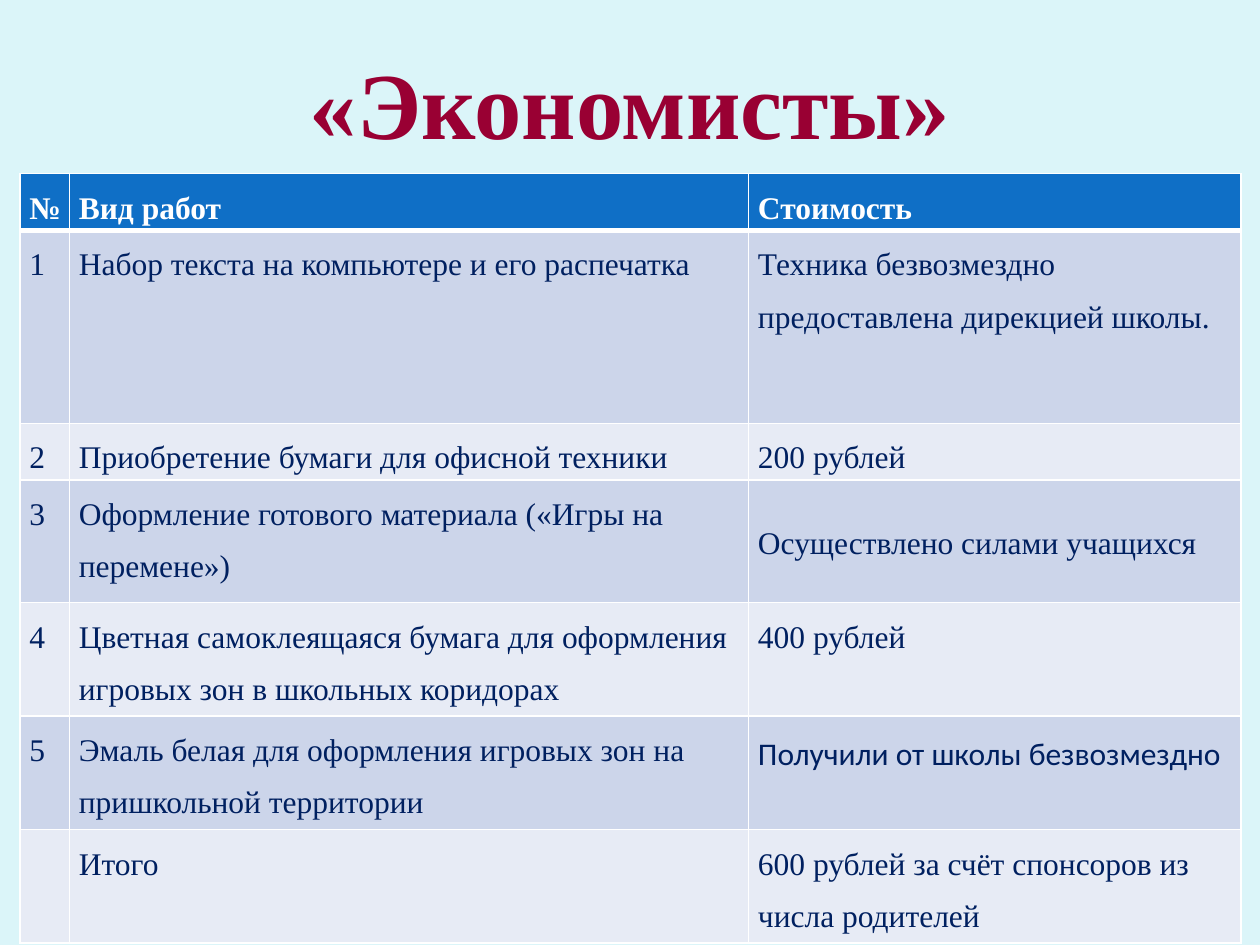
from dataclasses import dataclass

from lxml.etree import SubElement
from pptx import Presentation
from pptx.dml.color import RGBColor as RGB
from pptx.enum.text import MSO_ANCHOR as ANCHOR, PP_ALIGN as ALIGN
from pptx.oxml.ns import qn
from pptx.util import Cm, Pt


@dataclass(frozen=True)
class Theme:
    background: str = "DBF5F9"
    title: str = "990033"
    header: str = "0F6FC6"
    bands: tuple = ("CCD5EA", "E7EBF5")
    text: str = "002060"
    white: str = "FFFFFF"
    serif: str = "Times New Roman"
    sans: str = "Calibri"
    title_size: int = 54
    body_size: int = 18


class SlideBuilder:
    def __init__(self, prs, theme):
        self.theme = theme
        self.s = prs.slides.add_slide(prs.slide_layouts[6])
        fill = self.s.background.fill
        fill.solid()
        fill.fore_color.rgb = RGB.from_string(theme.background)

    def style(self, p, size, color, bold=False, font=None):
        for r in p.runs:
            r.font.name = font or self.theme.serif
            r.font.size = Pt(size)
            r.font.bold = bold
            r.font.color.rgb = RGB.from_string(color)

    def title(self, text, left, top, width, height):
        sp = self.s.shapes.add_textbox(Cm(left), Cm(top), Cm(width), Cm(height))
        tf = sp.text_frame
        tf.word_wrap = True
        tf.vertical_anchor = ANCHOR.MIDDLE
        tf.text = text
        p = tf.paragraphs[0]
        p.alignment = ALIGN.CENTER
        self.style(p, self.theme.title_size, self.theme.title, bold=True)

    def border(self, cell, side, width):
        ln = SubElement(cell._tc.get_or_add_tcPr(), qn(f"a:ln{side}"), w=str(Pt(width)))
        fill = SubElement(ln, qn("a:solidFill"))
        SubElement(fill, qn("a:srgbClr"), val=self.theme.white)

    def cell(self, cell, text, row):
        t = self.theme
        header = row == 0
        # Borders go in before the fill; a thick rule sits under the header
        for side in "LRTB":
            thick = (row, side) in ((0, "B"), (1, "T"))
            self.border(cell, side, 3 if thick else 1)
        cell.fill.solid()
        cell.fill.fore_color.rgb = RGB.from_string(
            t.header if header else t.bands[(row - 1) % 2])
        cell.margin_left = cell.margin_right = Cm(0.19)
        cell.margin_top = cell.margin_bottom = 0
        cell.text_frame.text = text
        p = cell.text_frame.paragraphs[0]
        p.line_spacing = 1.5
        self.style(p, t.body_size, t.white if header else t.text, bold=header)

    def table(self, rows, left, top, widths, heights):
        frame = self.s.shapes.add_table(
            len(rows), len(widths), Cm(left), Cm(top),
            Cm(sum(widths)), Cm(sum(heights)))
        table = frame.table
        table.first_row = True
        table.horz_banding = False
        for column, width in zip(table.columns, widths):
            column.width = Cm(width)
        for i, (values, height) in enumerate(zip(rows, heights)):
            table.rows[i].height = Cm(height)
            for j, value in enumerate(values):
                self.cell(table.cell(i, j), value, i)
        return table


WORKS = [
    ("№", "Вид работ", "Стоимость"),
    ("1", "Набор текста на компьютере и его распечатка",
     "Техника безвозмездно предоставлена дирекцией школы."),
    ("2", "Приобретение бумаги для офисной техники", "200 рублей"),
    ("3", "Оформление готового материала («Игры на перемене»)",
     "Осуществлено силами учащихся"),
    ("4", "Цветная самоклеящаяся бумага для оформления игровых зон "
          "в школьных коридорах", "400 рублей"),
    ("5", "Эмаль белая для оформления игровых зон на пришкольной территории",
     "Получили от школы безвозмездно"),
    ("", "Итого", "600 рублей за счёт спонсоров из числа родителей"),
]


def main():
    prs = Presentation()
    prs.slide_width, prs.slide_height = Cm(25.4), Cm(19.05)
    theme = Theme()
    slide = SlideBuilder(prs, theme)

    # Heading
    slide.title("«Экономисты»", 1.27, 0.95, 22.86, 2.2)

    # Cost table
    table = slide.table(WORKS, 0.4, 3.5, [1, 13.69, 9.93],
                        [1.11, 3.89, 1.11, 2.47, 2.1, 2.1, 2.1])

    # Two costs with a look of their own
    by_pupils = table.cell(3, 2)
    by_pupils.vertical_anchor = ANCHOR.MIDDLE
    by_pupils.text_frame.paragraphs[0].line_spacing = 1.15
    from_school = table.cell(5, 2).text_frame.paragraphs[0]
    slide.style(from_school, theme.body_size, theme.text, font=theme.sans)

    prs.save("out.pptx")


if __name__ == "__main__":
    main()
